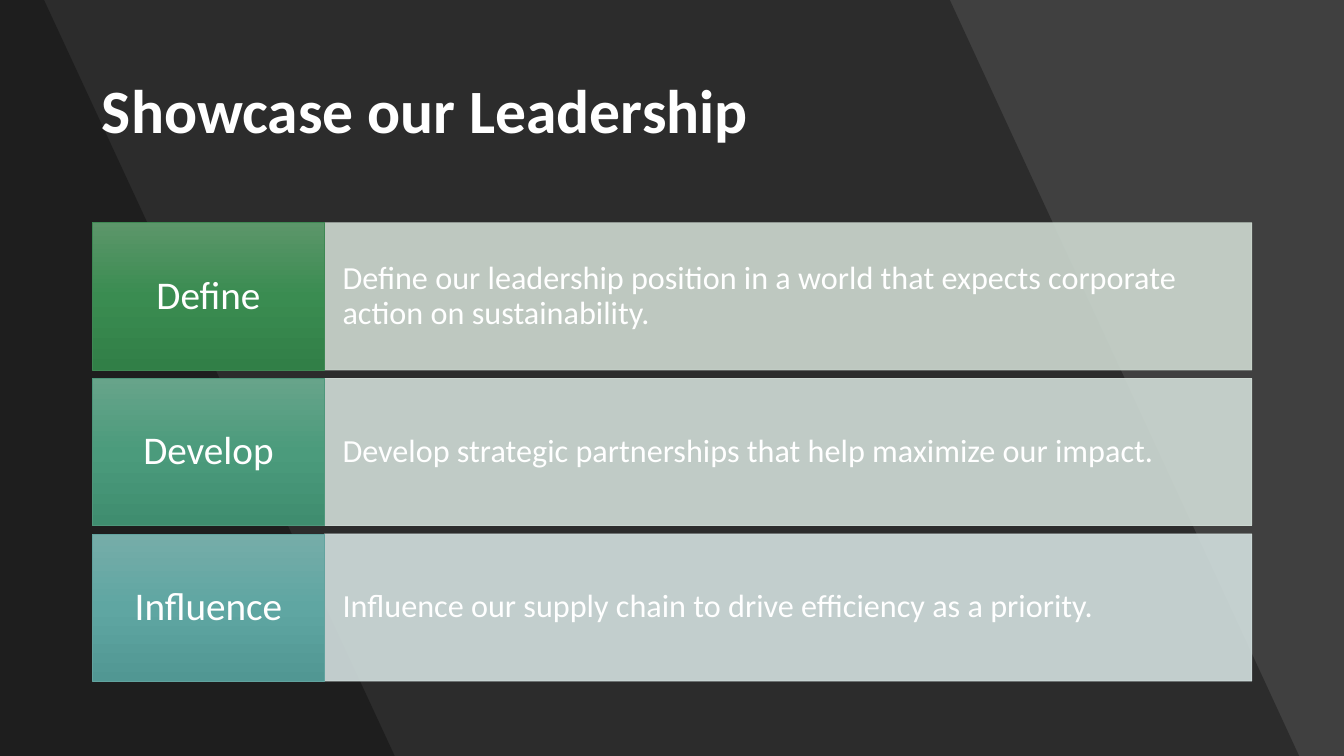
from lxml import etree
from pptx import Presentation
from pptx.dml.color import RGBColor
from pptx.enum import shapes, text
from pptx.oxml.ns import qn
from pptx.util import Pt

TITLE = "Showcase our Leadership"
ROWS = [
    {"name": "Define",
     "body": "Define our leadership position in a world that expects "
             "corporate action on sustainability.",
     "grad": ("5C966A", "3A8C51", "317F47"), "edge": "3E8853", "pale": "CEDAD1"},
    {"name": "Develop",
     "body": "Develop strategic partnerships that help maximize our impact.",
     "grad": ("67A48A", "4B9B7C", "3F8D6F"), "edge": "4E977B", "pale": "D1DDD7"},
    {"name": "Influence",
     "body": "Influence our supply chain to drive efficiency as a priority.",
     "grad": ("76ADA9", "5FA6A2", "519793"), "edge": "62A39F", "pale": "D3E0DF"},
]
THEME = {
    "font": "Calibri", "ink": "FFFFFF", "back": "404040", "shade": "000000",
    "title": 44, "name": 28, "body": 23,
    "shade_alpha": 30, "pale_alpha": 90, "edge": 0.5,
}
WIDE, HIGH = 960, 540
BANDS = [(678.5, 928), (31.5, 282)]  # right edge at top and at bottom
LEFT, TOP, NAME_W, BODY_W = 66, 159.2, 165.8, 662.4
ROW_H, PITCH = 105.1, 111.1


def rgb(code):
    return RGBColor.from_string(code)


def fade(shape, alpha):
    """Give every colour of the shape's fill and line this opacity."""
    for tone in shape._element.spPr.iter(qn("a:srgbClr")):
        etree.SubElement(tone, qn("a:alpha"), val=str(alpha * 1000))


def paint(shape, tone, edge=None):
    shape.shadow.inherit = False
    shape.fill.solid()
    shape.fill.fore_color.rgb = rgb(tone)
    if edge:
        shape.line.color.rgb = rgb(edge)
        shape.line.width = Pt(THEME["edge"])
    else:
        shape.line.fill.background()


def blend(shape, tones):
    """Fill the shape from top to bottom with evenly spaced tones."""
    shape.fill.gradient()
    grad = shape._element.spPr.find(qn("a:gradFill"))
    for part in list(grad):
        grad.remove(part)
    stops = etree.SubElement(grad, qn("a:gsLst"))
    for i, tone in enumerate(tones):
        place = 100000 * i // (len(tones) - 1)
        stop = etree.SubElement(stops, qn("a:gs"), pos=str(place))
        etree.SubElement(stop, qn("a:srgbClr"), val=tone)
    etree.SubElement(grad, qn("a:lin"), ang="5400000", scaled="0")


def write(shape, words, size, bold=False, align=text.PP_ALIGN.LEFT, pad=(7.2, 3.6)):
    frame = shape.text_frame
    frame.word_wrap = True
    frame.vertical_anchor = text.MSO_ANCHOR.MIDDLE
    frame.margin_left = frame.margin_right = Pt(pad[0])
    frame.margin_top = frame.margin_bottom = Pt(pad[1])
    para = frame.paragraphs[0]
    para.alignment, para.line_spacing = align, 0.9
    run = para.add_run()
    run.text = words
    font = run.font
    font.name, font.size, font.bold = THEME["font"], Pt(size), bold
    font.color.rgb = rgb(THEME["ink"])


def add_band(slide, top, base):
    pen = slide.shapes.build_freeform(0, 0)
    pen.add_line_segments(
        [(Pt(top), 0), (Pt(base), Pt(HIGH)), (0, Pt(HIGH))], close=True)
    band = pen.convert_to_shape()
    paint(band, THEME["shade"])
    fade(band, THEME["shade_alpha"])


def add_box(slide, x, y, w):
    return slide.shapes.add_shape(
        shapes.MSO_SHAPE.RECTANGLE, Pt(x), Pt(y), Pt(w), Pt(ROW_H))


def add_row(slide, y, row):
    body = add_box(slide, LEFT + NAME_W, y, BODY_W)
    paint(body, row["pale"], row["pale"])
    fade(body, THEME["pale_alpha"])
    write(body, row["body"], THEME["body"], pad=(12.9, 26.7))

    name = add_box(slide, LEFT, y, NAME_W)
    paint(name, row["edge"], row["edge"])
    blend(name, row["grad"])
    write(name, row["name"], THEME["name"], align=text.PP_ALIGN.CENTER,
          pad=(8.8, 10.4))


def main():
    deck = Presentation()
    deck.slide_width, deck.slide_height = Pt(WIDE), Pt(HIGH)
    slide = deck.slides.add_slide(deck.slide_layouts[6])
    slide.background.fill.solid()
    slide.background.fill.fore_color.rgb = rgb(THEME["back"])
    for top, base in BANDS:
        add_band(slide, top, base)
    head = slide.shapes.add_textbox(Pt(65.8), Pt(28.8), Pt(828.5), Pt(104.4))
    write(head, TITLE, THEME["title"], bold=True)
    for i, row in enumerate(ROWS):
        add_row(slide, TOP + i * PITCH, row)
    deck.save("out.pptx")


if __name__ == "__main__":
    main()
